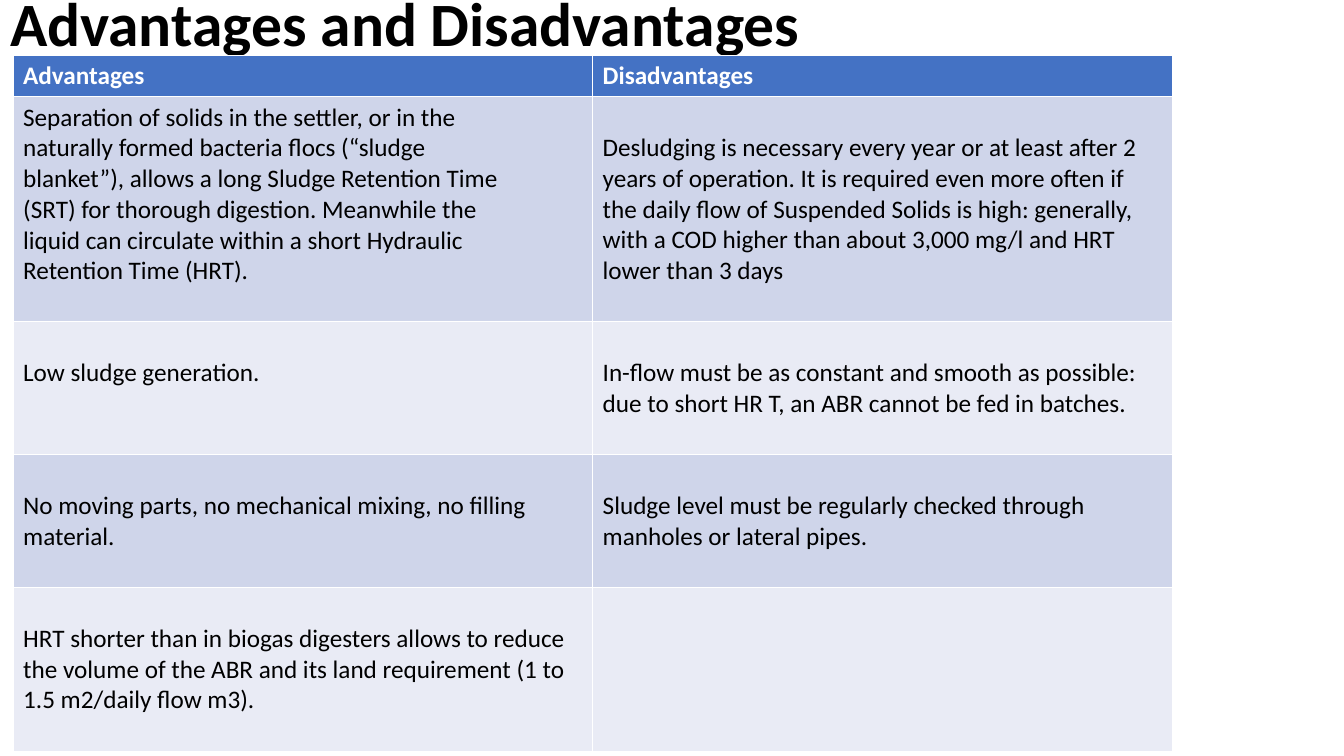
from dataclasses import dataclass

from pptx import Presentation
from pptx.dml.color import RGBColor as Rgb
from pptx.enum.text import MSO_ANCHOR as Anchor, MSO_AUTO_SIZE as Fit, PP_ALIGN as Align
from pptx.util import Cm, Pt


@dataclass(frozen=True)
class Theme:
    face: str = "Calibri"
    big: int = 44
    small: int = 18
    ink: str = "000000"
    white: str = "FFFFFF"
    head: str = "4472C4"
    bands: tuple = ("CFD5EA", "E9EBF5")


THEME = Theme()
TITLE = "Advantages and Disadvantages"
HEADS = ("Advantages", "Disadvantages")
SOLIDS = """Separation of solids in the settler, or in the
naturally formed bacteria flocs (“sludge
blanket”), allows a long Sludge Retention Time
(SRT) for thorough digestion. Meanwhile the
liquid can circulate within a short Hydraulic
Retention Time (HRT)."""
ROWS = (
    (SOLIDS,
     "Desludging is necessary every year or at least after 2 years of operation. "
     "It is required even more often if the daily flow of Suspended Solids is high: "
     "generally, with a COD higher than about 3,000 mg/l and HRT lower than 3 days"),
    ("Low sludge generation.",
     "In-flow must be as constant and smooth as possible: due to short HR T, "
     "an ABR cannot be fed in batches."),
    ("No moving parts, no mechanical mixing, no filling material.",
     "Sludge level must be regularly checked through manholes or lateral pipes."),
    ("HRT shorter than in biogas digesters allows to reduce the volume of the ABR "
     "and its land requirement (1 to 1.5 m2/daily flow m3).", ""),
)
HEIGHTS = (1.04, 5.67, 3.35, 3.35, 4.14)
WIDTH = 29.21
INSET, DROP = 0.13, 0.9  # cell top margin: plain, and one line lower


def style(frame, size, color, bold):
    look = {"name": THEME.face, "size": Pt(size), "bold": bold}
    for para in frame.paragraphs:
        for key, value in look.items():
            setattr(para.font, key, value)
        para.font.color.rgb = Rgb.from_string(color)


def add_title(slide):
    title = slide.shapes.title
    place = {"left": 0, "top": -1.17, "width": WIDTH, "height": 3.68}
    for key, value in place.items():
        setattr(title, key, Cm(value))
    frame = title.text_frame
    frame.text = TITLE
    frame.auto_size = Fit.NONE
    frame.vertical_anchor = Anchor.MIDDLE
    para = frame.paragraphs[0]
    para.alignment = Align.LEFT
    para.line_spacing = 0.9
    style(frame, THEME.big, THEME.ink, True)


def fill_cell(cell, text, fill, color, bold, top):
    cell.fill.solid()
    cell.fill.fore_color.rgb = Rgb.from_string(fill)
    cell.margin_top = Cm(top)
    cell.text = text
    style(cell.text_frame, THEME.small, color, bold)


def add_grid(slide):
    rows = (HEADS, *ROWS)
    grid = slide.shapes.add_table(
        len(rows), len(HEADS), Cm(0.33), Cm(1.4), Cm(WIDTH), Cm(sum(HEIGHTS))).table
    for r, (row, high) in enumerate(zip(rows, HEIGHTS)):
        grid.rows[r].height = Cm(high)
        for c, text in enumerate(row):
            cell = grid.cell(r, c)
            if r == 0:
                fill_cell(cell, text, THEME.head, THEME.white, True, INSET)
            else:
                top = INSET if text == SOLIDS else DROP
                fill_cell(cell, text, THEME.bands[(r - 1) % 2], THEME.ink, False, top)


def main():
    deck = Presentation()
    deck.slide_width, deck.slide_height = Cm(33.87), Cm(19.05)
    slide = deck.slides.add_slide(deck.slide_layouts.get_by_name("Title Only"))
    add_title(slide)
    add_grid(slide)
    deck.save("out.pptx")


if __name__ == "__main__":
    main()
